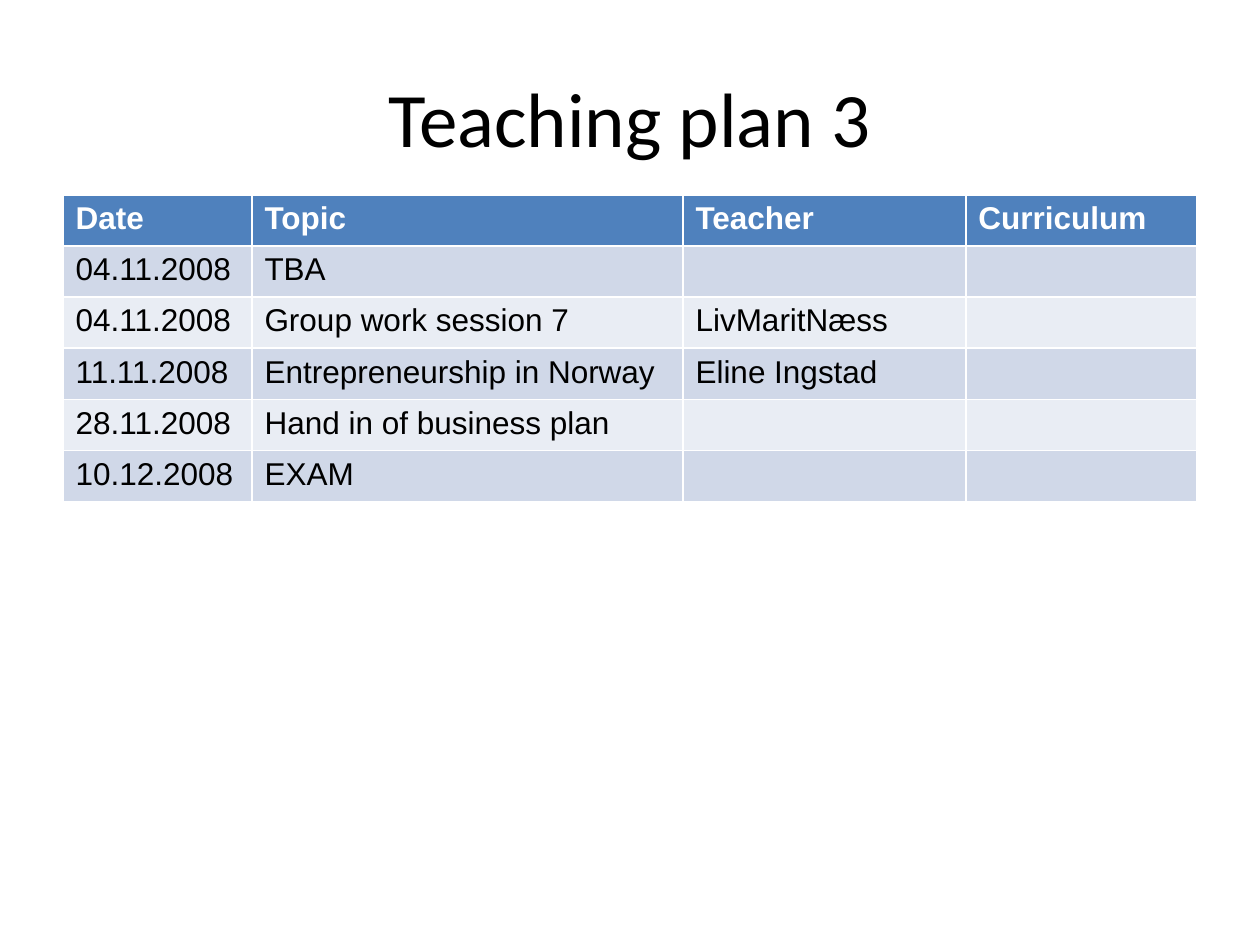
import pptx
import pptx.util
import pptx.dml.color
import pptx.enum.text

# Content
TITLE = "Teaching plan 3"
ROWS = [
    ("Date", "Topic", "Teacher", "Curriculum"),
    ("04.11.2008", "TBA", "", ""),
    ("04.11.2008", "Group work session 7", "LivMaritNæss", ""),
    ("11.11.2008", "Entrepreneurship in Norway", "Eline Ingstad", ""),
    ("28.11.2008", "Hand in of business plan", "", ""),
    ("10.12.2008", "EXAM", "", ""),
]

# Layout in px, 126 to the inch
SCALE = 914400 // 126
PAGE_SIZE = (1260, 945)
TITLE_BOX = {"left": 63, "top": 38, "width": 1134, "height": 157}
TABLE_LEFT, TABLE_TOP = 63, 195
COLUMN_WIDTHS = (189, 431, 283, 231)
ROW_HEIGHT = 51

COLORS = {"header": "4F81BD", "odd": "D0D8E8", "even": "E9EDF4",
          "light": "FFFFFF", "dark": "000000"}
TITLE_FONT = {"name": "Calibri", "size": pptx.util.Pt(44), "bold": False}
HEADER_FONT = {"name": "Arial", "size": pptx.util.Pt(18), "bold": True}
BODY_FONT = {**HEADER_FONT, "bold": False}


def px(length):
    return pptx.util.Emu(length * SCALE)


def color(name):
    return pptx.dml.color.RGBColor.from_string(COLORS[name])


def write(para, text, font, color_name):
    span = para.add_run()
    span.text = text
    for name, value in font.items():
        setattr(span.font, name, value)
    span.font.color.rgb = color(color_name)


deck = pptx.Presentation()
deck.slide_width, deck.slide_height = map(px, PAGE_SIZE)
page = deck.slides.add_slide(deck.slide_layouts[5])

# Title
title = page.shapes.title
for name, value in TITLE_BOX.items():
    setattr(title, name, px(value))
title.text_frame.vertical_anchor = pptx.enum.text.MSO_ANCHOR.MIDDLE
title_para = title.text_frame.paragraphs[0]
title_para.alignment = pptx.enum.text.PP_ALIGN.CENTER
write(title_para, TITLE, TITLE_FONT, "dark")

# Plan table: the default table style draws the white borders
table = page.shapes.add_table(
    len(ROWS), len(COLUMN_WIDTHS), px(TABLE_LEFT), px(TABLE_TOP),
    px(sum(COLUMN_WIDTHS)), px(ROW_HEIGHT * len(ROWS))).table
for column, width in zip(table.columns, COLUMN_WIDTHS):
    column.width = px(width)

for index, texts in enumerate(ROWS):
    table.rows[index].height = px(ROW_HEIGHT)
    if index == 0:
        fill, font, ink = "header", HEADER_FONT, "light"
    else:
        fill, font, ink = ("odd" if index % 2 else "even"), BODY_FONT, "dark"
    for cell, text in zip(table.rows[index].cells, texts):
        cell.fill.solid()
        cell.fill.fore_color.rgb = color(fill)
        if text:
            write(cell.text_frame.paragraphs[0], text, font, ink)

deck.save("out.pptx")
